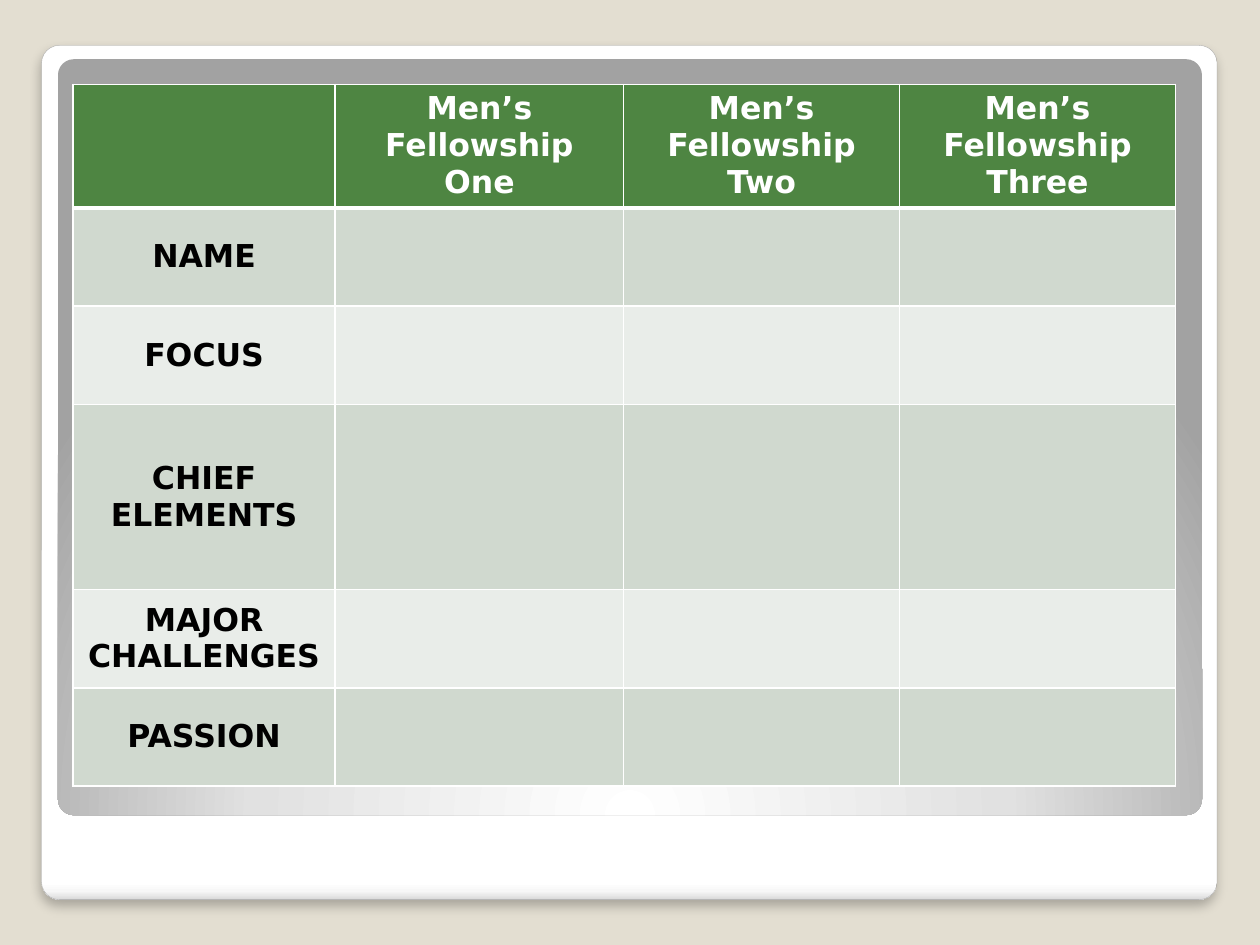
from pptx import Presentation
from pptx.dml.color import RGBColor
from pptx.enum.shapes import MSO_SHAPE
from pptx.enum.text import MSO_ANCHOR, PP_ALIGN
from pptx.oxml import parse_xml
from pptx.oxml.ns import nsdecls
from pptx.util import Inches, Pt

COLORS = {"bg": "E3DED1", "edge": "A4A4A4", "header": "4E8542", "odd": "D0D9CF",
          "even": "E9EDE9", "white": "FFFFFF", "black": "000000"}
FONT = {"name": "DejaVu Sans", "size": Pt(18), "bold": True}
COLS = [2.08, 2.29, 2.19, 2.19]
ROWS = [0.98, 0.78, 0.78, 1.47, 0.78, 0.78]
HEADINGS = [""] + [f"Men’s Fellowship\n{number}" for number in ("One", "Two", "Three")]
TOPICS = ["NAME", "FOCUS", "CHIEF ELEMENTS", "MAJOR CHALLENGES", "PASSION"]


def add_panel(box, stops, direction):
    """Add a rounded panel with a gradient of (percent, colour) stops."""
    sp = slide.shapes.add_shape(MSO_SHAPE.ROUNDED_RECTANGLE, *map(Inches, box))
    sp.adjustments[0] = 0.021
    sp.shadow.inherit = False
    sp.line.fill.background()
    sp.fill.background()
    gs = "".join(f'<a:gs pos="{pos * 1000}"><a:srgbClr val="{color}"/></a:gs>'
                 for pos, color in stops)
    grad = parse_xml(f'<a:gradFill {nsdecls("a")} rotWithShape="1">'
                     f'<a:gsLst>{gs}</a:gsLst>{direction}</a:gradFill>')
    props = sp._element.spPr
    props.replace(props.find("{*}noFill"), grad)
    return sp


def set_borders(cell, bottom):
    """Draw white borders, 1 pt wide except for the given bottom width."""
    tcPr = cell._tc.get_or_add_tcPr()
    for i, (side, width) in enumerate({"L": 1, "R": 1, "T": 1, "B": bottom}.items()):
        tcPr.insert(i, parse_xml(
            f'<a:ln{side} {nsdecls("a")} w="{Pt(width)}"><a:solidFill>'
            f'<a:srgbClr val="{COLORS["white"]}"/></a:solidFill></a:ln{side}>'))


prs = Presentation()
prs.slide_width, prs.slide_height = Inches(10), Inches(7.5)
slide = prs.slides.add_slide(prs.slide_layouts[6])
slide.background.fill.solid()
slide.background.fill.fore_color.rgb = RGBColor.from_string(COLORS["bg"])

# Card and the panel inside it
card = add_panel((0.33, 0.36, 9.33, 6.78),
                 [(0, "FFFFFF"), (98, "FFFFFF"), (99, "F7F7F7"), (100, "DADADA")],
                 '<a:lin ang="5400000" scaled="0"/>')
card.line.color.rgb = RGBColor.from_string(COLORS["edge"])
card.line.width = Pt(0.16)
card._element.spPr.find("{*}effectLst").append(parse_xml(
    f'<a:outerShdw {nsdecls("a")} blurRad="{Pt(6)}" dist="{Pt(4)}" dir="5400000" '
    f'algn="t" rotWithShape="0"><a:srgbClr val="{COLORS["black"]}">'
    '<a:alpha val="25000"/></a:srgbClr></a:outerShdw>'))
add_panel((0.46, 0.47, 9.08, 6),
          [(0, "FFFFFF"), (55, "E1E1E1"), (100, "A2A2A2")],
          '<a:path path="circle"><a:fillToRect l="50000" t="175000" r="50000" b="-75000"/></a:path>')

# Comparison table
table = slide.shapes.add_table(len(ROWS), len(COLS), Inches(0.58), Inches(0.67),
                               Inches(sum(COLS)), Inches(sum(ROWS))).table
for col, width in zip(table.columns, COLS):
    col.width = Inches(width)
for row, height in zip(table.rows, ROWS):
    row.height = Inches(height)

texts = [HEADINGS] + [[topic, "", "", ""] for topic in TOPICS]
for r, row_texts in enumerate(texts):
    is_header = r == 0
    fill = "header" if is_header else "odd" if r % 2 else "even"
    for c, text in enumerate(row_texts):
        cell = table.cell(r, c)
        cell.fill.solid()
        cell.fill.fore_color.rgb = RGBColor.from_string(COLORS[fill])
        set_borders(cell, 3 if is_header else 1)
        cell.vertical_anchor = MSO_ANCHOR.TOP if is_header else MSO_ANCHOR.MIDDLE
        if not text:
            continue
        cell.text = text
        for p in cell.text_frame.paragraphs:
            p.alignment = PP_ALIGN.CENTER
            font = p.runs[0].font
            for name, value in FONT.items():
                setattr(font, name, value)
            font.color.rgb = RGBColor.from_string(COLORS["white" if is_header else "black"])

prs.save("out.pptx")
